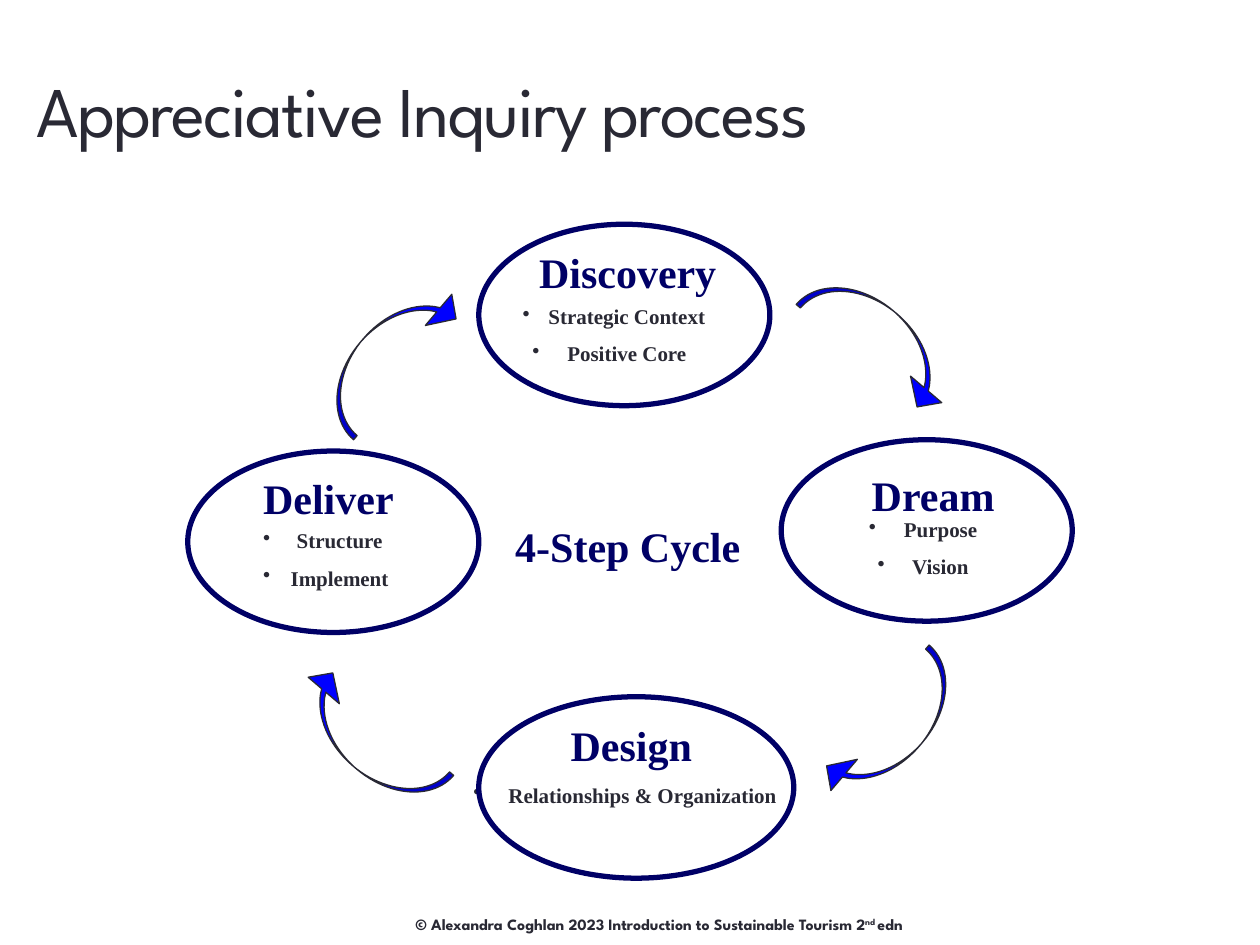
from pptx import Presentation
from pptx.dml.color import RGBColor
from pptx.enum import shapes, text
from pptx.oxml.ns import qn
from pptx.util import Inches, Pt
from lxml import etree

COLORS = {"navy": "000066", "ink": "292934", "arrow": "0000FF"}
SERIF, SANS = "Times New Roman", "League Spartan"
LEFT, CENTER = text.PP_ALIGN.LEFT, text.PP_ALIGN.CENTER

# Each step: heading, heading box, bullets, bullet box, ellipse
STEPS = [
    ("Discovery", (4.18, 1.91, 1.75, 0.51), ["Strategic Context", "Positive Core"],
     (4.05, 2.36, 1.75, 0.61), (3.8, 1.78, 2.31, 1.44)),
    ("Dream", (6.82, 3.68, 1.31, 0.51), ["Purpose", "Vision"],
     (6.76, 4.05, 1.31, 0.61), (6.2, 3.49, 2.31, 1.44)),
    ("Deliver", (1.99, 3.7, 1.31, 0.51), ["Structure", "Implement"],
     (1.99, 4.14, 1.31, 0.61), (1.49, 3.58, 2.31, 1.44)),
    ("Design", (4.43, 5.66, 1.31, 0.51), ["Relationships & Organization"],
     (3.61, 6.16, 2.88, 0.3), (3.8, 5.53, 2.5, 1.44)),
]
# Top-left corners of the arrows, each turned a quarter further
ARROWS = [(6.86, 5.1), (2.68, 5.16), (2.86, 2.09), (6.78, 1.99)]


def rgb(name):
    return RGBColor.from_string(COLORS[name])


def inches(box):
    return [Inches(v) for v in box]


def add_run(p, words, size, color, font=SERIF, bold=True):
    r = p.add_run()
    r.text = words
    r.font.size, r.font.bold, r.font.name = Pt(size), bold, font
    r.font.color.rgb = rgb(color)
    return r


def add_text_frame(s, box):
    tf = s.shapes.add_textbox(*inches(box)).text_frame
    tf.word_wrap = True
    return tf


def add_heading(s, box, words):
    add_run(add_text_frame(s, box).paragraphs[0], words, 24, "navy")


def add_bullets(s, box, items):
    tf = add_text_frame(s, box)
    for i, item in enumerate(items):
        p = tf.add_paragraph() if i else tf.paragraphs[0]
        p.alignment = CENTER
        if i:
            p.space_before = Pt(7)
        pPr = p._p.get_or_add_pPr()
        etree.SubElement(pPr, qn("a:buFontTx"))
        etree.SubElement(pPr, qn("a:buChar")).set("char", "•")
        add_run(p, " " + item, 12, "ink")


def add_step(s, heading, heading_box, items, items_box, oval_box):
    add_heading(s, heading_box, heading)
    add_bullets(s, items_box, items)
    sp = s.shapes.add_shape(shapes.MSO_SHAPE.OVAL, *inches(oval_box))
    sp.shadow.inherit = False
    sp.fill.background()
    sp.line.color.rgb, sp.line.width = rgb("navy"), Pt(3)


def add_arrow(s, box, rotation):
    sp = s.shapes.add_shape(shapes.MSO_SHAPE.CURVED_LEFT_ARROW, *inches(box))
    sp.shadow.inherit = False
    sp.rotation = rotation
    for i, value in enumerate((0.094, 0.706, 0.333)):
        sp.adjustments[i] = value
    sp.fill.solid()
    sp.fill.fore_color.rgb = rgb("arrow")
    sp.line.color.rgb, sp.line.width = rgb("ink"), Pt(0.75)


def add_title(s, box):
    sp = s.shapes.title
    sp.left, sp.top, sp.width, sp.height = inches(box)
    tf = sp.text_frame
    tf.word_wrap, tf.auto_size = True, text.MSO_AUTO_SIZE.NONE
    tf.vertical_anchor = text.MSO_ANCHOR.BOTTOM
    p = tf.paragraphs[0]
    p.alignment, p.line_spacing = LEFT, 0.9
    r = add_run(p, "Appreciative Inquiry process", 40.7, "ink", SANS, False)
    r.font._element.set("spc", "-100")


def add_footer(s, box):
    p = add_text_frame(s, box).paragraphs[0]
    p.alignment = CENTER
    for words, baseline in [
        ("© Alexandra Coghlan 2023 Introduction to Sustainable Tourism 2", 0),
        ("nd ", 30000),
        ("edn", 0),
    ]:
        r = add_run(p, words, 9, "ink", SANS)
        r.font._element.set("baseline", str(baseline))


def add_cycle(s):
    for step in STEPS:
        add_step(s, *step)
    add_heading(s, (3.99, 4.08, 2.19, 0.5), "4-Step Cycle")
    for i, (left, top) in enumerate(ARROWS):
        add_arrow(s, (left, top, 0.46, 1.42), 40.3 + 90 * i)


def main():
    prs = Presentation()
    prs.slide_width, prs.slide_height = Inches(10), Inches(7.5)
    s = prs.slides.add_slide(prs.slide_layouts[5])
    add_footer(s, (2.87, 7.21, 4.72, 0.25))
    add_cycle(s)
    add_title(s, (0.19, 0.13, 8.12, 1.13))
    prs.save("out.pptx")


if __name__ == "__main__":
    main()
